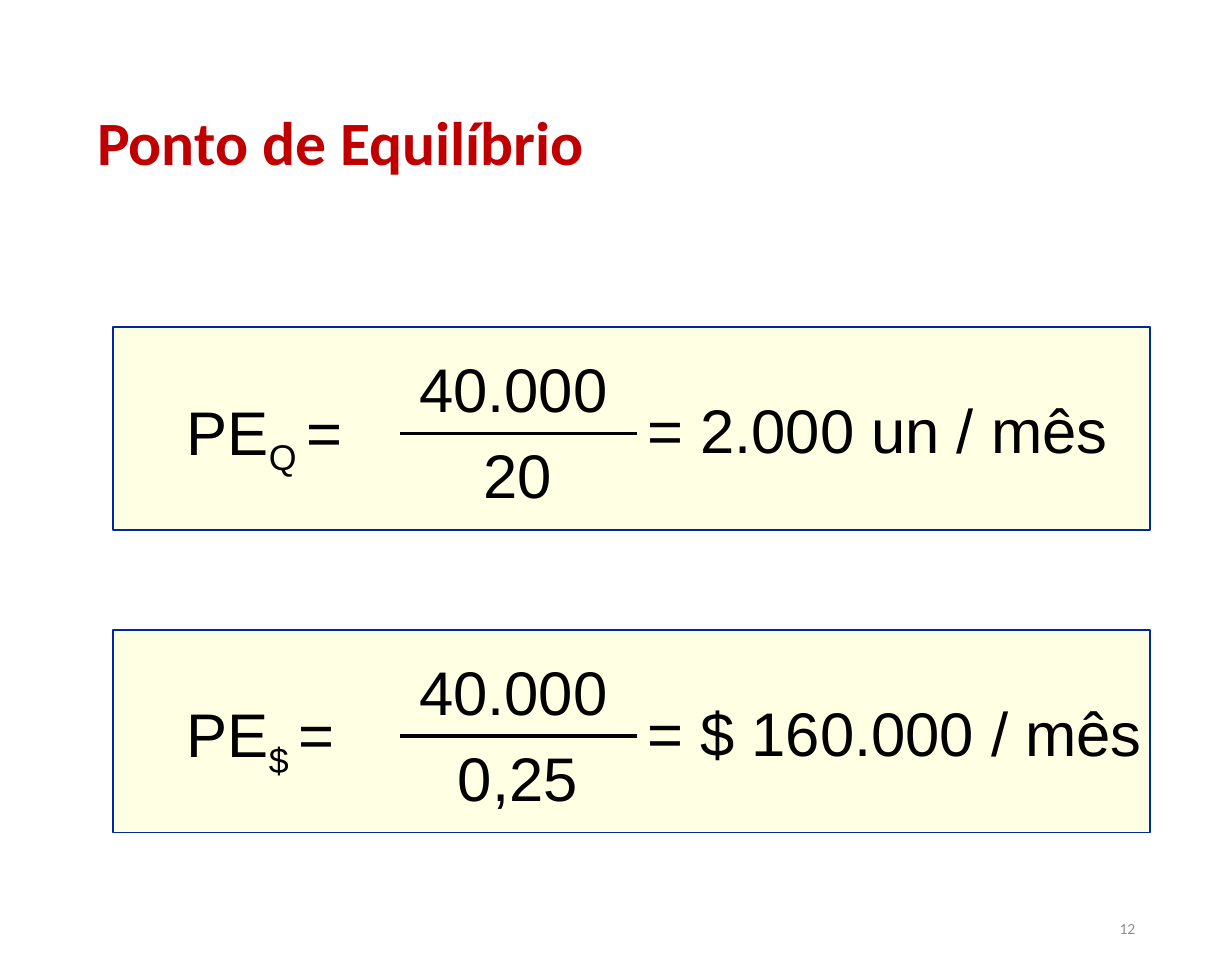
from lxml import etree
from pptx import Presentation
from pptx.dml.color import RGBColor
from pptx.enum.shapes import MSO_CONNECTOR, MSO_SHAPE
from pptx.enum.text import MSO_ANCHOR, MSO_AUTO_SIZE, PP_ALIGN
from pptx.oxml.ns import qn
from pptx.util import Emu, Pt

RECTANGLE = MSO_SHAPE.RECTANGLE
STRAIGHT = MSO_CONNECTOR.STRAIGHT
MIDDLE = MSO_ANCHOR.MIDDLE
FIT_SHAPE = MSO_AUTO_SIZE.SHAPE_TO_FIT_TEXT
LEFT, CENTER, RIGHT = PP_ALIGN.LEFT, PP_ALIGN.CENTER, PP_ALIGN.RIGHT

RED = RGBColor(0xC0, 0x00, 0x00)
GRAY = RGBColor(0x8C, 0x8C, 0x8C)
BLACK = RGBColor(0x00, 0x00, 0x00)
CREAM = RGBColor(0xFF, 0xFF, 0xE3)
NAVY = RGBColor(0x00, 0x27, 0x9F)

PX = 9525  # EMU per px, 96 px to the inch
SLIDE_WIDTH, SLIDE_HEIGHT = 960, 760
ROW_HEIGHT = 67

# (top, subscript, label width, denominator, result, result width)
FORMULAS = [
    (255, "Q", 145, "20", "= 2.000 un / mês", 393),
    (491, "$", 137, "0,25", "= $ 160.000 / mês", 436),
]


def px(*lengths):
    return [Emu(length * PX) for length in lengths]


def style_span(span, font, size, color, bold=False):
    span.font.name = font
    span.font.size = Pt(size)
    span.font.color.rgb = color
    span.font.bold = bold


def add_text(shapes, box, text, align=LEFT, font="Arial", size=36, color=BLACK):
    text_box = shapes.add_textbox(*px(*box))
    frame = text_box.text_frame
    frame.word_wrap = True
    frame.text = text
    para = frame.paragraphs[0]
    para.alignment = align
    style_span(para.runs[0], font, size, color)
    return text_box


def add_title(page, box):
    title = page.shapes.title
    title.left, title.top, title.width, title.height = px(*box)
    frame = title.text_frame
    frame.text = "Ponto de Equilíbrio"
    frame.vertical_anchor = MIDDLE
    para = frame.paragraphs[0]
    para.alignment = LEFT
    para.line_spacing = 0.9
    style_span(para.runs[0], "Calibri", 36, RED, bold=True)


def add_label(shapes, box, subscript):
    label = add_text(shapes, box, "PE")
    label.fill.solid()
    label.fill.fore_color.rgb = CREAM
    label.text_frame.word_wrap = False
    label.text_frame.auto_size = FIT_SHAPE
    para = label.text_frame.paragraphs[0]
    for text, baseline in ((f"{subscript} ", -25000), ("=", 0)):
        span = para.add_run()
        span.text = text
        style_span(span, "Arial", 36, BLACK)
        span.font._element.set("baseline", str(baseline))


def add_fraction(shapes, left, top, numerator, denominator):
    add_text(shapes, (left, top, 192, ROW_HEIGHT), numerator, CENTER)
    add_text(shapes, (left + 23, top + 67, 153, ROW_HEIGHT), denominator, CENTER)
    bar = shapes.add_connector(STRAIGHT, *px(left + 8, top + 69, left + 192, top + 69))
    bar.line.color.rgb = BLACK
    bar.line.width = Pt(2.25)
    etree.SubElement(bar._element.spPr, qn("a:effectLst"))


def add_formula(page, box, subscript, label_width, denominator, result, result_width):
    left, top, _, _ = box
    shapes = page.shapes.add_group_shape().shapes

    # Framed panel
    panel = shapes.add_shape(RECTANGLE, *px(*box))
    panel.shadow.inherit = False
    panel.fill.solid()
    panel.fill.fore_color.rgb = CREAM
    panel.line.color.rgb = NAVY
    panel.line.width = Pt(1)

    # Label, fraction and result
    add_label(shapes, (left + 48, top + 47, label_width, ROW_HEIGHT), subscript)
    add_fraction(shapes, left + 216, top + 14, "40.000", denominator)
    add_text(shapes, (left + 407, top + 46, result_width, ROW_HEIGHT), result)


def add_page_number(page, box):
    number = add_text(page.shapes, box, "12", RIGHT, "Calibri", 9, GRAY)
    number.text_frame.vertical_anchor = MIDDLE


def main():
    deck = Presentation()
    deck.slide_width, deck.slide_height = px(SLIDE_WIDTH, SLIDE_HEIGHT)
    page = deck.slides.add_slide(deck.slide_layouts[5])

    add_title(page, (66, 40, 828, 147))
    for top, *parts in FORMULAS:
        add_formula(page, (88, top, 808, 158), *parts)
    add_page_number(page, (678, 704, 216, 40))

    deck.save("out.pptx")


if __name__ == "__main__":
    main()
